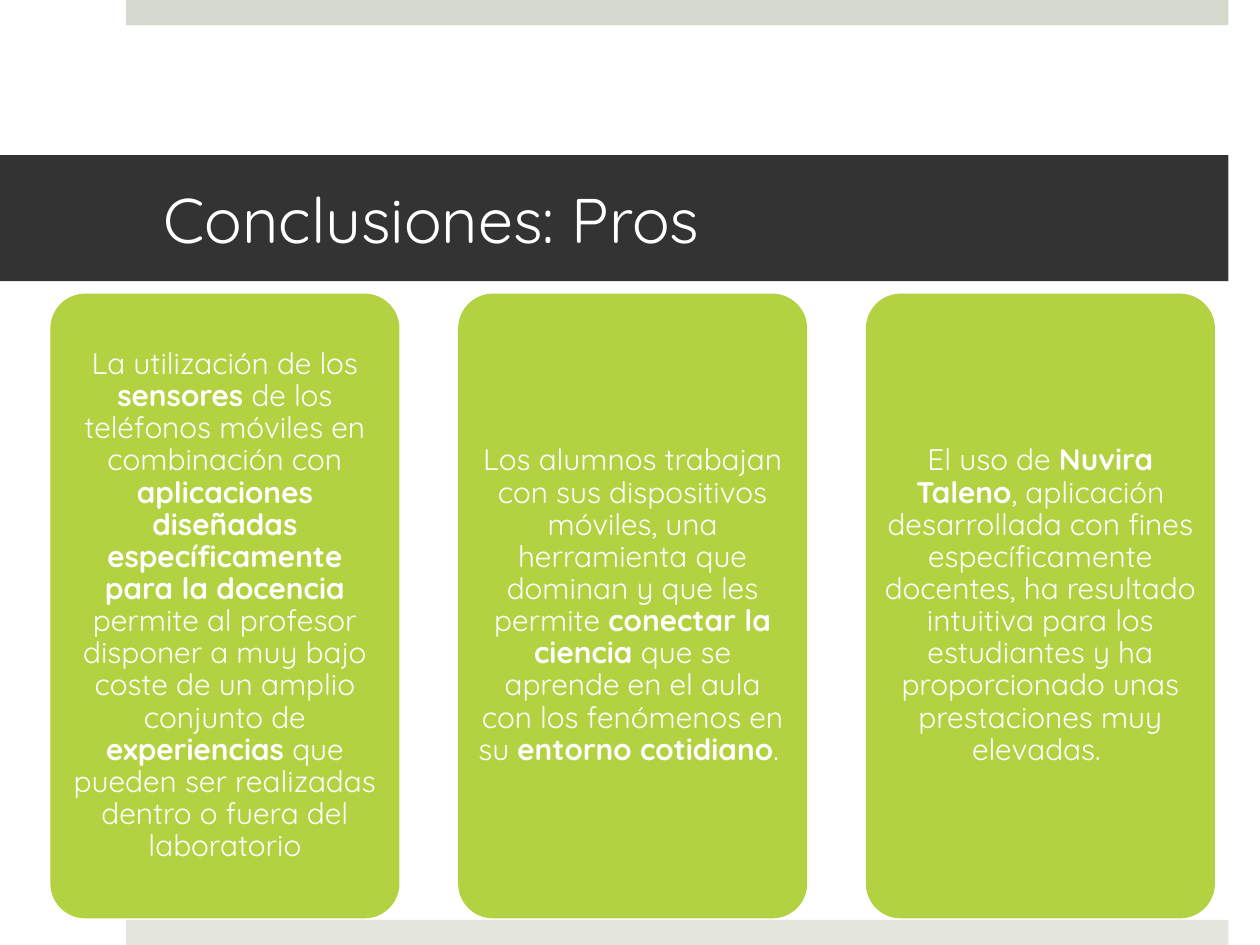
from pptx import Presentation
from pptx.dml.color import RGBColor
from pptx.enum.shapes import MSO_SHAPE
from pptx.enum.text import MSO_ANCHOR, MSO_AUTO_SIZE, PP_ALIGN
from pptx.util import Pt

COLORS = {
    "top_bar": "D6D9CD",
    "bottom_bar": "E4E6DE",
    "title_band": "333333",
    "card": "B2D242",
    "text": "FFFFFF",
}
FONT = "Quicksand"
CARD_LEFT, CARD_TOP, CARD_PITCH = 28.8, 167.8, 233
CARD_WIDTH, CARD_HEIGHT = 199.5, 357

CARDS = [
    [
        ("La utilización de los ", False),
        ("sensores", True),
        (" de los teléfonos móviles en combinación con ", False),
        ("aplicaciones diseñadas específicamente para la docencia ", True),
        ("permite al profesor disponer a muy bajo coste de un amplio conjunto de ", False),
        ("experiencias", True),
        (" que pueden ser realizadas dentro o fuera del laboratorio", False),
    ],
    [
        ("Los alumnos trabajan con sus dispositivos móviles, una herramienta "
         "que dominan y que les permite ", False),
        ("conectar la ciencia ", True),
        ("que se aprende en el aula con los fenómenos en su ", False),
        ("entorno cotidiano", True),
        (". ", False),
    ],
    [
        ("El uso de ", False),
        ("Nuvira Taleno", True),
        (", aplicación desarrollada con fines específicamente docentes, ha resultado "
         "intuitiva para los estudiantes y ha proporcionado unas prestaciones "
         "muy elevadas. ", False),
    ],
]


def fill_shape(sp, color):
    sp.fill.solid()
    sp.fill.fore_color.rgb = RGBColor.from_string(COLORS[color])


def add_block(s, kind, left, top, width, height, color):
    sp = s.shapes.add_shape(kind, Pt(left), Pt(top), Pt(width), Pt(height))
    sp.shadow.inherit = False
    sp.line.fill.background()
    fill_shape(sp, color)
    return sp


def set_frame(tf, left, top, right, bottom):
    tf.margin_left, tf.margin_top = Pt(left), Pt(top)
    tf.margin_right, tf.margin_bottom = Pt(right), Pt(bottom)
    tf.vertical_anchor = MSO_ANCHOR.MIDDLE
    tf.auto_size = MSO_AUTO_SIZE.NONE
    tf.word_wrap = True


def format_run(r, size, bold=False):
    r.font.name = FONT
    r.font.size = Pt(size)
    r.font.bold = bold
    r.font.color.rgb = RGBColor.from_string(COLORS["text"])


def set_title(s, text):
    sp = s.shapes.title
    sp.left, sp.top, sp.width, sp.height = Pt(0), Pt(88.6), Pt(702), Pt(72)
    fill_shape(sp, "title_band")
    tf = sp.text_frame
    set_frame(tf, 93.6, 3.6, 21.6, 3.6)
    tf.text = text
    p = tf.paragraphs[0]
    p.alignment = PP_ALIGN.LEFT
    format_run(p.runs[0], 36)


def add_card(s, left, parts):
    sp = add_block(s, MSO_SHAPE.ROUNDED_RECTANGLE, left, CARD_TOP,
                   CARD_WIDTH, CARD_HEIGHT, "card")
    sp.adjustments[0] = 0.1
    tf = sp.text_frame
    set_frame(tf, 5, 5, 5, 5)
    p = tf.paragraphs[0]
    p.alignment = PP_ALIGN.CENTER
    p.line_spacing = 0.9
    for text, bold in parts:
        r = p.add_run()
        r.text = text
        format_run(r, 17, bold)


def main():
    prs = Presentation()
    prs.slide_width, prs.slide_height = Pt(720), Pt(540)
    s = prs.slides.add_slide(prs.slide_layouts[5])
    for top, color in ((0, "top_bar"), (525.6, "bottom_bar")):
        add_block(s, MSO_SHAPE.RECTANGLE, 72, top, 630, 14.4, color)
    set_title(s, "Conclusiones: Pros")
    for i, parts in enumerate(CARDS):
        add_card(s, CARD_LEFT + i * CARD_PITCH, parts)
    prs.save("out.pptx")


if __name__ == "__main__":
    main()
